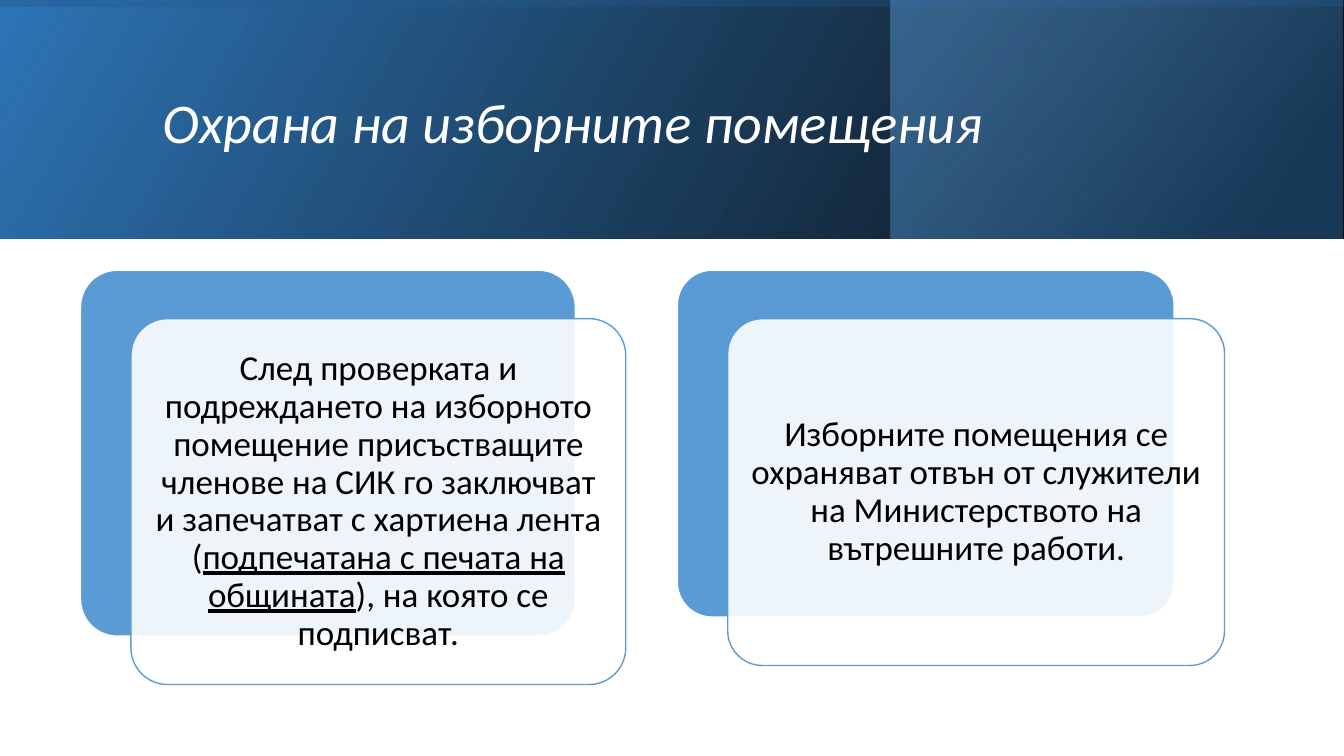
from lxml.etree import SubElement
from pptx import Presentation
from pptx.dml.color import RGBColor
from pptx.enum.shapes import MSO_SHAPE
from pptx.enum.text import MSO_ANCHOR, MSO_AUTO_SIZE, PP_ALIGN
from pptx.oxml.ns import qn
from pptx.util import Cm, Pt

SLIDE_W, SLIDE_H, BAND_H = 33.87, 19.05, 6.02
BLUE, WHITE, BLACK = "5B9BD5", "FFFFFF", "000000"
CARD_DX, CARD_DY, TEXT_GAP = 1.27, 1.22, 0.27


def rgb(value):
    """Turn a hex string into a colour."""
    return RGBColor.from_string(value)


def set_alpha(sp, percents):
    """Give each colour of the shape's fill its opacity in percent."""
    fill = sp.element.spPr.find(qn("a:gradFill"))
    if fill is None:
        fill = sp.element.spPr.find(qn("a:solidFill"))
    for color, percent in zip(fill.iter(qn("a:srgbClr")), percents):
        SubElement(color, qn("a:alpha")).set("val", str(percent * 1000))


def add_gradient_panel(slide, box, angle, stops, rotation=0):
    """Add a mirrored rectangle with a two-stop translucent gradient."""
    sp = slide.shapes.add_shape(MSO_SHAPE.RECTANGLE, *map(Cm, box))
    sp.shadow.inherit = False
    sp.rotation = rotation
    sp.element.spPr.xfrm.set("flipH", "1")
    sp.line.fill.background()
    sp.fill.gradient()
    sp.fill.gradient_angle = 360 - angle
    for stop, (position, color, _) in zip(sp.fill.gradient_stops, stops):
        stop.position = position
        stop.color.rgb = rgb(color)
    set_alpha(sp, [percent for _, _, percent in stops])


def add_round_box(slide, box, fill, line):
    """Add a rounded rectangle with a thin outline."""
    sp = slide.shapes.add_shape(MSO_SHAPE.ROUNDED_RECTANGLE, *map(Cm, box))
    sp.shadow.inherit = False
    sp.adjustments[0] = 0.1
    sp.fill.solid()
    sp.fill.fore_color.rgb = rgb(fill)
    sp.line.color.rgb = rgb(line)
    sp.line.width = Pt(1)
    return sp


def format_paragraph(p, size, color, align):
    """Set the font, alignment and line spacing of a paragraph."""
    p.alignment = align
    p.line_spacing = 0.9
    p.font.name = "Calibri"
    p.font.size = Pt(size)
    p.font.color.rgb = rgb(color)


def add_card(slide, left, top, width, height, runs):
    """Add a blue box, the white card shifted over it and the card text."""
    add_round_box(slide, (left, top, width, height), BLUE, WHITE)
    left, top = left + CARD_DX, top + CARD_DY
    card = add_round_box(slide, (left, top, width, height), WHITE, BLUE)
    set_alpha(card, [90])
    text_box = (left + TEXT_GAP, top + TEXT_GAP,
                width - 2 * TEXT_GAP, height - 2 * TEXT_GAP)
    tf = slide.shapes.add_textbox(*map(Cm, text_box)).text_frame
    tf.word_wrap = True
    tf.vertical_anchor = MSO_ANCHOR.MIDDLE
    tf.margin_left = tf.margin_right = Cm(0.25)
    tf.margin_top = tf.margin_bottom = Cm(0.25)
    p = tf.paragraphs[0]
    format_paragraph(p, 25, BLACK, PP_ALIGN.CENTER)
    for text, underline in runs:
        r = p.add_run()
        r.text = text
        if underline:
            r.font.underline = True


def set_title(slide, text):
    """Place the title over the header band."""
    title = slide.shapes.title
    slide.shapes.element.append(title.element)
    title.left, title.top = Cm(3.84), Cm(0.97)
    title.width, title.height = Cm(27), Cm(4.37)
    tf = title.text_frame
    tf.text = text
    tf.auto_size = MSO_AUTO_SIZE.NONE
    tf.vertical_anchor = MSO_ANCHOR.MIDDLE
    p = tf.paragraphs[0]
    format_paragraph(p, 40, WHITE, PP_ALIGN.LEFT)
    p.font.italic = True


def main():
    """Build the slide and save it."""
    prs = Presentation()
    prs.slide_width, prs.slide_height = Cm(SLIDE_W), Cm(SLIDE_H)
    slide = prs.slides.add_slide(prs.slide_layouts[5])

    add_gradient_panel(slide, (0, 0, SLIDE_W, BAND_H), 330,
                       [(0, BLACK, 96), (1, "2E75B6", 100)][:1]
                       + [(1, "2E75B6", 100)])
    add_gradient_panel(slide, (22.45, 0, 11.38, BAND_H), 320,
                       [(0.19, "1F4E79", 68), (1, BLUE, 48)])
    shift = (SLIDE_W - BAND_H) / 2
    add_gradient_panel(slide, (shift, -shift, BAND_H, SLIDE_W), 350,
                       [(0.23, "2E75B6", 16), (0.99, BLACK, 45)], 270)
    set_title(slide, "Охрана на изборните помещения")

    add_card(slide, 2.03, 6.81, 12.47, 9.22, [
        ("След проверката и подреждането на изборното помещение "
         "присъстващите членове на СИК го заключват и запечатват "
         "с хартиена лента (", False),
        ("подпечатана с печата на общината", True),
        ("), на която се подписват.", False)])
    add_card(slide, 17.07, 6.81, 12.52, 8.74, [
        ("Изборните помещения се охраняват отвън от служители "
         "на Министерството на вътрешните работи.", False)])
    prs.save("out.pptx")


if __name__ == "__main__":
    main()
